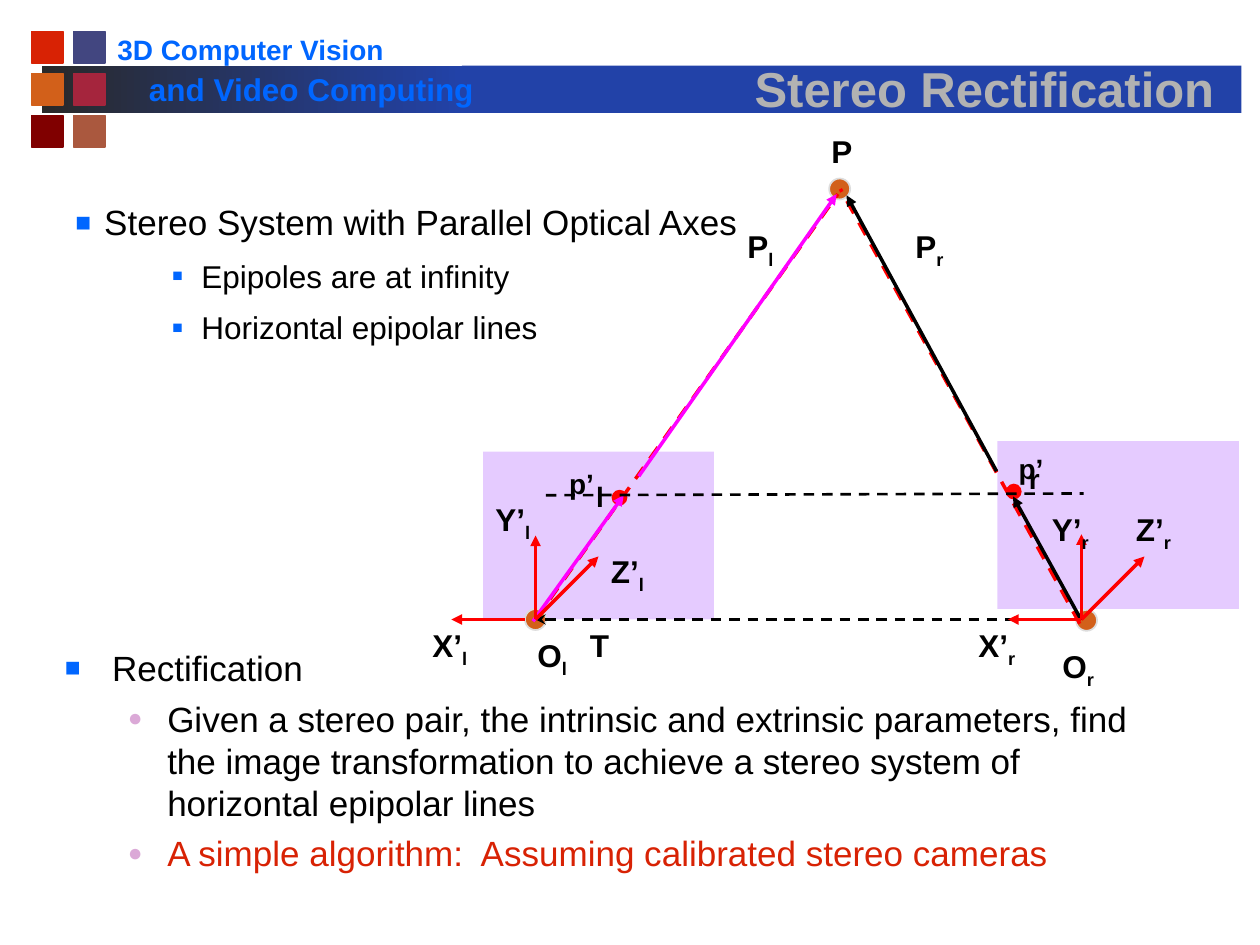
from lxml.etree import SubElement
from pptx import Presentation
from pptx.dml.color import RGBColor
from pptx.enum.dml import MSO_LINE
from pptx.enum.shapes import MSO_CONNECTOR, MSO_SHAPE
from pptx.enum.text import MSO_ANCHOR, PP_ALIGN
from pptx.oxml.ns import qn
from pptx.util import Pt

BLACK = RGBColor(0x00, 0x00, 0x00)
RED = RGBColor(0xFF, 0x00, 0x00)
MAGENTA = RGBColor(0xFF, 0x00, 0xFF)
BLUE = RGBColor(0x00, 0x66, 0xFF)
BAR_BLUE = RGBColor(0x22, 0x42, 0xA8)
BAR_DARK = RGBColor(0x29, 0x29, 0x29)
ORANGE = RGBColor(0xD2, 0x60, 0x1A)
BRICK = RGBColor(0xD8, 0x22, 0x04)
LILAC = RGBColor(0xCC, 0x99, 0xFF)
PINK = RGBColor(0xDB, 0xA9, 0xD7)
SILVER = RGBColor(0xDD, 0xDD, 0xDD)
GREY = RGBColor(0xB2, 0xB2, 0xB2)

SQUARE_ROWS = [
    (BRICK, RGBColor(0x42, 0x46, 0x80)),
    (ORANGE, RGBColor(0xA5, 0x25, 0x3D)),
    (RGBColor(0x80, 0x00, 0x00), RGBColor(0xAA, 0x58, 0x3E)),
]
IMAGE_PLANES = [(570, 252, 138, 96), (276, 258, 132, 96)]
IMAGE_POINTS = [(354, 284.4), (579.3, 280.9)]
LARGE_POINTS = [(306, 354), (620.9, 354.5), (479.8, 108)]

SMALL_LABELS = [("p’", 325.2, 266.4), ("l", 340.6, 274.3), ("p’", 582, 258), ("r", 588, 264)]
LABELS = [
    ("P", "", 468, 72), ("P", "l", 420, 126), ("P", "r", 516, 126),
    ("O", "l", 300, 360), ("O", "r", 600, 366),
    ("X’", "l", 240, 354), ("X’", "r", 552, 354),
    ("Y’", "l", 276, 282), ("Y’", "r", 594, 288),
    ("Z’", "l", 342, 312), ("Z’", "r", 642, 288),
    ("T", "", 330, 354),
]

LEFT_ORIGIN = (306, 354)
RIGHT_ORIGIN = (618, 354)
SIGHT_LINES = [((306, 354), (478.8, 110.9)), ((617, 356.4), (480.2, 108))]
RAYS = [
    ((304.6, 355), (356.4, 283), MAGENTA), ((365, 272.2), (478.1, 110.9), MAGENTA),
    ((617.8, 354.2), (578.9, 283.7), BLACK), ((569.5, 269.3), (483.8, 111.6), BLACK),
]
AXES = [
    ((300, 354), (258, 354)), (LEFT_ORIGIN, (306, 306)), (LEFT_ORIGIN, (342, 318)),
    (RIGHT_ORIGIN, (576, 354)), (RIGHT_ORIGIN, (618, 305.3)), (RIGHT_ORIGIN, (654, 318)),
]

SQUARE_BULLET = {"character": "■", "bullet_color": BLUE}
ROUND_BULLET = {"character": "●", "bullet_color": PINK, "bullet_size": 70, "margin": 58.5, "hanging": 22.5}
TOP_BULLET = SQUARE_BULLET | {"bullet_size": 75, "margin": 16.5, "hanging": 16.5}
SUB_BULLET = SQUARE_BULLET | {"bullet_size": 55, "margin": 72, "hanging": 16.5}
OVERVIEW = [
    ("Stereo System with Parallel Optical Axes", 20, BLACK, TOP_BULLET),
    ("Epipoles are at infinity", 18, BLACK, SUB_BULLET),
    ("Horizontal epipolar lines", 18, BLACK, SUB_BULLET),
]
RECTIFICATION = [
    ("Rectification", 20, BLACK, SQUARE_BULLET | {"bullet_size": 75, "margin": 27, "hanging": 27}),
    ("Given a stereo pair, the intrinsic and extrinsic parameters, find the image transformation "
     "to achieve a stereo system of horizontal epipolar lines", 20, BLACK, ROUND_BULLET),
    ("A simple algorithm:  Assuming calibrated stereo cameras", 20, BRICK, ROUND_BULLET),
]

presentation = Presentation()
presentation.slide_width = Pt(720)
presentation.slide_height = Pt(540)
slide = presentation.slides.add_slide(presentation.slide_layouts[6])


def add_filled(kind, box, color, outline=None, alpha=None):
    shape = slide.shapes.add_shape(kind, *map(Pt, box))
    shape.shadow.inherit = False
    shape.fill.solid()
    shape.fill.fore_color.rgb = color
    if alpha:
        color_element = shape._element.spPr.find(qn("a:solidFill"))[0]
        SubElement(color_element, qn("a:alpha"), val=str(alpha * 1000))
    if outline is None:
        shape.line.fill.background()
    else:
        shape.line.color.rgb = outline
        shape.line.width = Pt(1)
    return shape


def add_line(start, end, color, width=2, dashed=False, head=None, tail=None):
    connector = slide.shapes.add_connector(MSO_CONNECTOR.STRAIGHT, *map(Pt, start + end))
    connector.line.color.rgb = color
    connector.line.width = Pt(width)
    if dashed:
        connector.line.dash_style = MSO_LINE.DASH
    properties = connector._element.spPr
    for tag, arrow in (("a:headEnd", head), ("a:tailEnd", tail)):
        if arrow:
            SubElement(properties.find(qn("a:ln")), qn(tag), type=arrow)
    SubElement(properties, qn("a:effectLst"))


def add_frame(box, inset=True):
    frame = slide.shapes.add_textbox(*map(Pt, box)).text_frame
    frame.word_wrap = True
    if not inset:
        frame.margin_left = frame.margin_right = frame.margin_top = frame.margin_bottom = 0
    return frame


def add_run(paragraph, text, size=18, color=BLACK, bold=True, subscript=False):
    run = paragraph.add_run()
    run.text = text
    run.font.name = "Arial"
    run.font.size = Pt(size)
    run.font.bold = bold
    run.font.color.rgb = color
    if subscript:
        run.font._element.set("baseline", "-25000")
    return run


def set_bullet(paragraph, character, bullet_color, bullet_size, margin, hanging):
    properties = paragraph._p.get_or_add_pPr()
    properties.set("marL", str(Pt(margin)))
    properties.set("indent", str(-Pt(hanging)))
    color = SubElement(properties, qn("a:buClr"))
    SubElement(color, qn("a:srgbClr"), val=str(bullet_color))
    SubElement(properties, qn("a:buSzPct"), val=str(bullet_size * 1000))
    SubElement(properties, qn("a:buFont"), typeface="Arial")
    SubElement(properties, qn("a:buChar"), char=character)


def add_bullets(box, items, space_before, line_spacing=1.0):
    frame = add_frame(box)
    for index, (text, size, color, bullet) in enumerate(items):
        paragraph = frame.add_paragraph() if index else frame.paragraphs[0]
        paragraph.space_before = Pt(space_before)
        paragraph.line_spacing = line_spacing
        set_bullet(paragraph, **bullet)
        add_run(paragraph, text, size=size, color=color, bold=False)


def add_header():
    fade = add_filled(MSO_SHAPE.RECTANGLE, (24, 37.5, 240, 27), BAR_BLUE)
    fade.fill.gradient()
    fade.fill.gradient_angle = 0
    for stop, color, position in zip(fade.fill.gradient_stops, (BAR_DARK, BAR_BLUE), (0, 1)):
        stop.color.rgb = color
        stop.position = position
    add_filled(MSO_SHAPE.RECTANGLE, (264, 37.5, 445.5, 27), BAR_BLUE)
    for row, colors in enumerate(SQUARE_ROWS):
        for column, color in enumerate(colors):
            add_filled(MSO_SHAPE.RECTANGLE, (18 + 24 * column, 18 + 24 * row, 18, 18), color, outline=color)
    add_run(add_frame((60, 15, 200, 26.6)).paragraphs[0], "3D Computer Vision", size=16, color=BLUE)
    add_run(add_frame((78, 36.7, 204, 28.8)).paragraphs[0], "and Video Computing", color=BLUE)
    title = add_frame((408, 22.3, 309, 48.2))
    title.vertical_anchor = MSO_ANCHOR.BOTTOM
    title.paragraphs[0].alignment = PP_ALIGN.CENTER
    run = add_run(title.paragraphs[0], "Stereo Rectification", size=28, color=GREY)
    effects = run.font._element.find(qn("a:solidFill"))
    effects.addnext(SubElement(run.font._element, qn("a:effectLst")))
    shadow = SubElement(effects.getnext(), qn("a:outerShdw"), dist="35921", dir="2700000")
    SubElement(shadow, qn("a:srgbClr"), val=str(BLACK))


def add_diagram():
    for box in IMAGE_PLANES:
        add_filled(MSO_SHAPE.RECTANGLE, box, LILAC, alpha=50)
    for points, size, color, outline in ((IMAGE_POINTS, 9, RED, None), (LARGE_POINTS, 12, ORANGE, SILVER)):
        for x, y in points:
            add_filled(MSO_SHAPE.OVAL, (x - size / 2, y - size / 2, size, size), color, outline=outline)
    for text, left, top in SMALL_LABELS:
        add_run(add_frame((left, top, 24, 19.4), inset=False).paragraphs[0], text, size=16)
    for start, end in SIGHT_LINES:
        add_line(start, end, RED, dashed=True)
    for start, end, color in RAYS:
        add_line(start, end, color, tail="triangle")
    add_line(LEFT_ORIGIN, RIGHT_ORIGIN, BLACK, width=1.5, dashed=True, head="stealth")
    add_line((312, 283), (619.2, 282), BLACK, width=1.5, dashed=True)
    for start, end in AXES:
        add_line(start, end, RED, tail="triangle")
    for text, subscript, left, top in LABELS:
        paragraph = add_frame((left, top, 42, 28.8)).paragraphs[0]
        add_run(paragraph, text)
        if subscript:
            add_run(paragraph, subscript, subscript=True)


add_header()
add_bullets((30, 366, 636, 138), RECTIFICATION, space_before=4.8)
add_diagram()
add_bullets((36, 114, 396, 89.3), OVERVIEW, space_before=10, line_spacing=0.9)
presentation.save("out.pptx")
